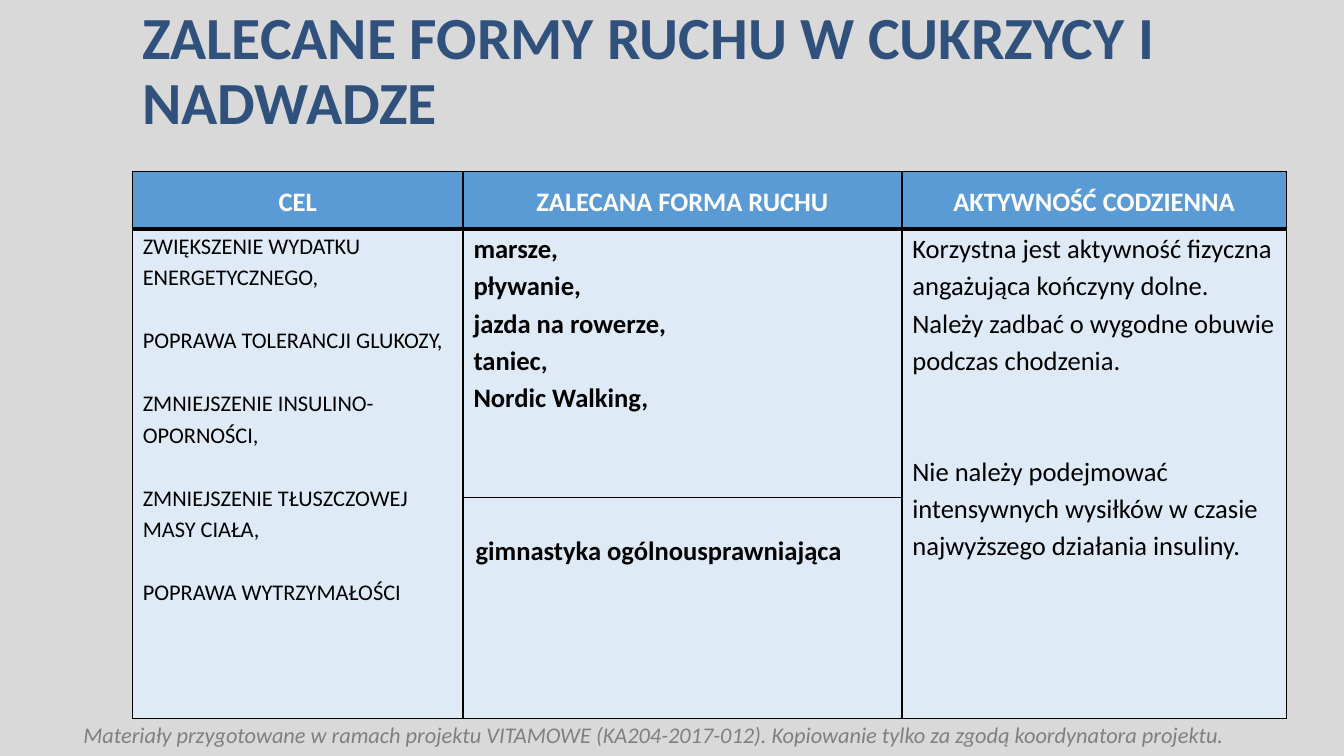
from lxml import etree
from pptx import Presentation
from pptx.dml.color import RGBColor
from pptx.enum.text import MSO_ANCHOR, PP_ALIGN
from pptx.oxml.ns import qn
from pptx.util import Pt

PX = 9525
MIDDLE, TOP = MSO_ANCHOR.MIDDLE, MSO_ANCHOR.TOP
LEFT, CENTER = PP_ALIGN.LEFT, PP_ALIGN.CENTER
COLORS = {
    "background": "D9D9D9", "title": "31517D", "header": "5B9BD5",
    "body": "DEEBF7", "white": "FFFFFF", "black": "000000", "footer": "808080",
}


def write(frame, lines, size, color, bold=False, italic=False,
          align=LEFT, spacing=1.0, gap=0):
    frame.word_wrap = True
    for i, line in enumerate(lines):
        paragraph = frame.paragraphs[0] if i == 0 else frame.add_paragraph()
        paragraph.alignment = align
        paragraph.line_spacing = spacing
        paragraph.space_after = Pt(gap if i < len(lines) - 1 else 0)
        run = paragraph.add_run()
        run.text = line
        font_format = {"name": "Calibri", "size": Pt(size), "bold": bold, "italic": italic}
        for key, value in font_format.items():
            setattr(run.font, key, value)
        run.font.color.rgb = RGBColor.from_string(COLORS[color])


def set_borders(cell, widths):
    properties = cell._tc.get_or_add_tcPr()
    for i, (side, points) in enumerate(widths.items()):
        line = etree.Element(qn(f"a:ln{side}"), w=str(Pt(points)))
        fill = etree.SubElement(line, qn("a:solidFill"))
        etree.SubElement(fill, qn("a:srgbClr"), val=COLORS["black"])
        properties.insert(i, line)


prs = Presentation()
prs.slide_width, prs.slide_height = 1280 * PX, 720 * PX
slide = prs.slides.add_slide(prs.slide_layouts[6])
slide.background.fill.solid()
slide.background.fill.fore_color.rgb = RGBColor.from_string(COLORS["background"])

# Title
title = slide.shapes.add_textbox(126 * PX, 21 * PX, 1088 * PX, 96 * PX).text_frame
title.vertical_anchor = MIDDLE
write(title, ["ZALECANE FORMY RUCHU W CUKRZYCY I NADWADZE"], 42.7, "title",
      bold=True, spacing=0.9)

# Table grid
column_widths = [315, 418, 366]
row_heights = [55, 256, 210]
table = slide.shapes.add_table(
    len(row_heights), len(column_widths), 126 * PX, 163 * PX,
    sum(column_widths) * PX, sum(row_heights) * PX).table
table.horz_banding = False
for column, width in zip(table.columns, column_widths):
    column.width = width * PX
for row, height in zip(table.rows, row_heights):
    row.height = height * PX

# Cell fills, margins and borders, with a thick rule below the header
row_styles = [("header", MIDDLE, 1, 3), ("body", TOP, 3, 1), ("body", TOP, 1, 1)]
for row, (fill, anchor, top, bottom) in zip(table.rows, row_styles):
    for cell in row.cells:
        cell.fill.solid()
        cell.fill.fore_color.rgb = RGBColor.from_string(COLORS[fill])
        cell.vertical_anchor = anchor
        cell.margin_left = cell.margin_right = 10 * PX
        cell.margin_top = cell.margin_bottom = 0
        set_borders(cell, {"L": 1, "R": 1, "T": top, "B": bottom})

# The goal and the daily activity span both body rows
for column in (0, 2):
    table.cell(1, column).merge(table.cell(2, column))

# Header texts
headings = ["CEL", "ZALECANA FORMA RUCHU", "AKTYWNOŚĆ CODZIENNA"]
for column, heading in enumerate(headings):
    write(table.cell(0, column).text_frame, [heading], 19, "white",
          bold=True, align=CENTER, spacing=1.15)

# Body texts: lines, size, bold, gap after each paragraph
goals = [
    "ZWIĘKSZENIE WYDATKU ENERGETYCZNEGO,",
    "POPRAWA TOLERANCJI GLUKOZY,",
    "ZMNIEJSZENIE INSULINO-OPORNOŚCI,",
    "ZMNIEJSZENIE TŁUSZCZOWEJ MASY CIAŁA,",
    "POPRAWA WYTRZYMAŁOŚCI",
]
exercises = ["marsze,", "pływanie,", "jazda na rowerze,", "taniec,", "Nordic Walking,"]
daily_activity = [
    "Korzystna jest aktywność fizyczna angażująca kończyny dolne. "
    "Należy zadbać o wygodne obuwie podczas chodzenia.",
    "Nie należy podejmować intensywnych wysiłków w czasie "
    "najwyższego działania insuliny.",
]
body = [(goals, 16, False, 22.5), (exercises, 19, True, 0), (daily_activity, 19, False, 53)]
for column, (lines, size, bold, gap) in enumerate(body):
    write(table.cell(1, column).text_frame, lines, size, "black",
          bold=bold, spacing=1.15, gap=gap)

# General gymnastics, set lower in its cell
gymnastics = table.cell(2, 1)
gymnastics.margin_left = gymnastics.margin_right = 12 * PX
gymnastics.margin_top = 36 * PX
write(gymnastics.text_frame, ["gimnastyka ogólnousprawniająca"], 19, "black", bold=True)

# Footer
footer = slide.shapes.add_textbox(70 * PX, 682 * PX, 1200 * PX, 36 * PX).text_frame
write(footer, ["Materiały przygotowane w ramach projektu VITAMOWE (KA204-2017-012). "
               "Kopiowanie tylko za zgodą koordynatora projektu."], 16, "footer", italic=True)

prs.save("out.pptx")
